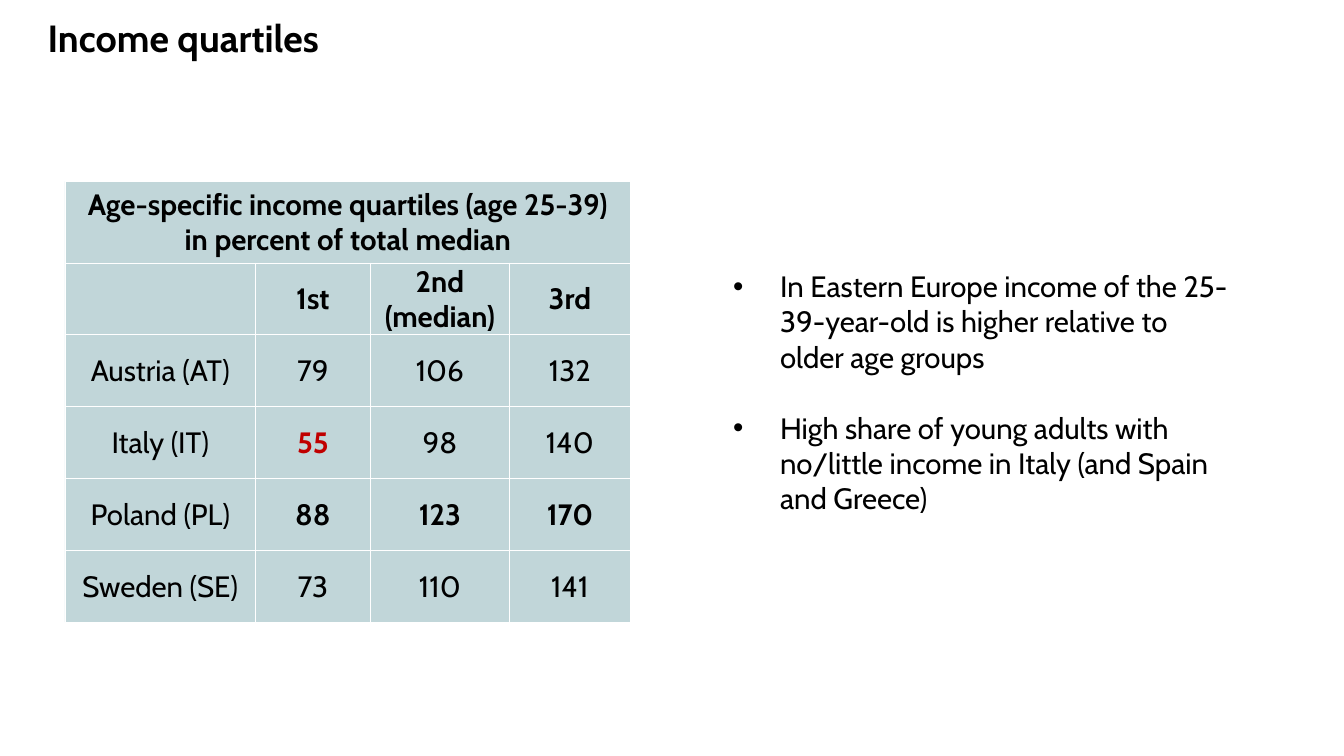
from lxml.etree import SubElement
from pptx import Presentation
from pptx.dml.color import RGBColor
from pptx.enum.text import MSO_ANCHOR, MSO_AUTO_SIZE, PP_ALIGN
from pptx.oxml import parse_xml
from pptx.oxml.ns import nsdecls, qn
from pptx.util import Inches, Pt

FONT = "Cabin"
BLACK, RED, WHITE, TEAL = "000000", "C00000", "FFFFFF", "327882"
PAGE_WIDTH, PAGE_HEIGHT = 17.78, 10
COLUMN_WIDTHS = [2.52, 1.52, 1.84, 1.6]
HEADING_HEIGHT, ROW_HEIGHT = 1.08, 0.95
HEADING = ["Age-specific income quartiles (age 25-39)", "in percent of total median"]
ROWS = [
    ["", "1st", "2nd (median)", "3rd"],
    ["Austria (AT)", "79", "106", "132"],
    ["Italy (IT)", "55", "98", "140"],
    ["Poland (PL)", "88", "123", "170"],
    ["Sweden (SE)", "73", "110", "141"],
]
BOLD_VALUES = {"55", "88", "123", "170"}
POINTS = [
    "In Eastern Europe income of the 25-39-year-old is higher relative to older age groups",
    "High share of young adults with no/little income in Italy (and Spain and Greece)",
]


def color(value):
    return RGBColor.from_string(value)


def write(para, text, size=28, fill=BLACK, bold=False, align=PP_ALIGN.LEFT):
    para.alignment = align
    span = para.add_run()
    span.text = text
    span.font.name = FONT
    span.font.size = Pt(size)
    span.font.bold = bold
    span.font.color.rgb = color(fill)


def indent(para, left, first=0):
    properties = para._p.get_or_add_pPr()
    properties.set("marL", str(Inches(left)))
    properties.set("indent", str(Inches(first)))
    return properties


def add_title(page, text):
    title = page.shapes.title
    title.left, title.top = 0, 0
    title.width, title.height = Inches(PAGE_WIDTH), Inches(1.06)
    frame = title.text_frame
    frame.auto_size = MSO_AUTO_SIZE.NONE
    frame.vertical_anchor = MSO_ANCHOR.MIDDLE
    para = frame.paragraphs[0]
    para.line_spacing = 0.9
    write(para, text, size=36, bold=True)
    indent(para, 0.53)


def add_bullets(page, points, left, top, width, height):
    box = page.shapes.add_textbox(Inches(left), Inches(top), Inches(width), Inches(height))
    frame = box.text_frame
    frame.word_wrap = True
    for index, text in enumerate(points):
        para = frame.add_paragraph() if index else frame.paragraphs[0]
        para.space_before = Pt(34 if index else 0)
        write(para, text)
        properties = indent(para, 0.62, -0.62)
        SubElement(properties, qn("a:buFont"), typeface="Arial")
        SubElement(properties, qn("a:buChar"), char="•")


def style_cell(cell):
    cell.margin_left = cell.margin_right = cell.margin_top = Inches(0.01)
    cell.margin_bottom = 0
    cell.vertical_anchor = MSO_ANCHOR.MIDDLE
    cell.fill.solid()
    cell.fill.fore_color.rgb = color(TEAL)
    properties = cell._tc.get_or_add_tcPr()
    SubElement(properties.find(".//" + qn("a:srgbClr")), qn("a:alpha"), val="30000")
    for index, side in enumerate(["lnL", "lnR", "lnT", "lnB"]):
        border = parse_xml(
            f'<a:{side} {nsdecls("a")} w="{Pt(1)}"><a:solidFill>'
            f'<a:srgbClr val="{WHITE}"/></a:solidFill></a:{side}>'
        )
        properties.insert(index, border)


def fill_cell(cell, lines, **format):
    for index, text in enumerate(lines):
        frame = cell.text_frame
        para = frame.add_paragraph() if index else frame.paragraphs[0]
        write(para, text, align=PP_ALIGN.CENTER, **format)


def add_quartile_table(page, left, top):
    height = HEADING_HEIGHT + ROW_HEIGHT * len(ROWS)
    table = page.shapes.add_table(
        len(ROWS) + 1, len(COLUMN_WIDTHS),
        Inches(left), Inches(top), Inches(sum(COLUMN_WIDTHS)), Inches(height),
    ).table
    table.first_row = table.horz_banding = False
    for column, width in zip(table.columns, COLUMN_WIDTHS):
        column.width = Inches(width)
    for index, row in enumerate(table.rows):
        row.height = Inches(ROW_HEIGHT if index else HEADING_HEIGHT)
    for cell in table.iter_cells():
        style_cell(cell)
    table.cell(0, 0).merge(table.cell(0, len(COLUMN_WIDTHS) - 1))
    fill_cell(table.cell(0, 0), HEADING, bold=True)
    for row_index, values in enumerate(ROWS, 1):
        for column_index, value in enumerate(values):
            if value:
                fill_cell(
                    table.cell(row_index, column_index), [value],
                    bold=row_index == 1 or value in BOLD_VALUES,
                    fill=RED if value == "55" else BLACK,
                )


def main():
    deck = Presentation()
    deck.slide_width, deck.slide_height = Inches(PAGE_WIDTH), Inches(PAGE_HEIGHT)
    page = deck.slides.add_slide(deck.slide_layouts[5])
    add_title(page, "Income quartiles")
    add_bullets(page, POINTS, 0.54 * PAGE_WIDTH, 0.35 * PAGE_HEIGHT,
                0.38 * PAGE_WIDTH, 0.34 * PAGE_HEIGHT)
    add_quartile_table(page, 0.86, 0.24 * PAGE_HEIGHT)
    deck.save("out.pptx")


if __name__ == "__main__":
    main()
